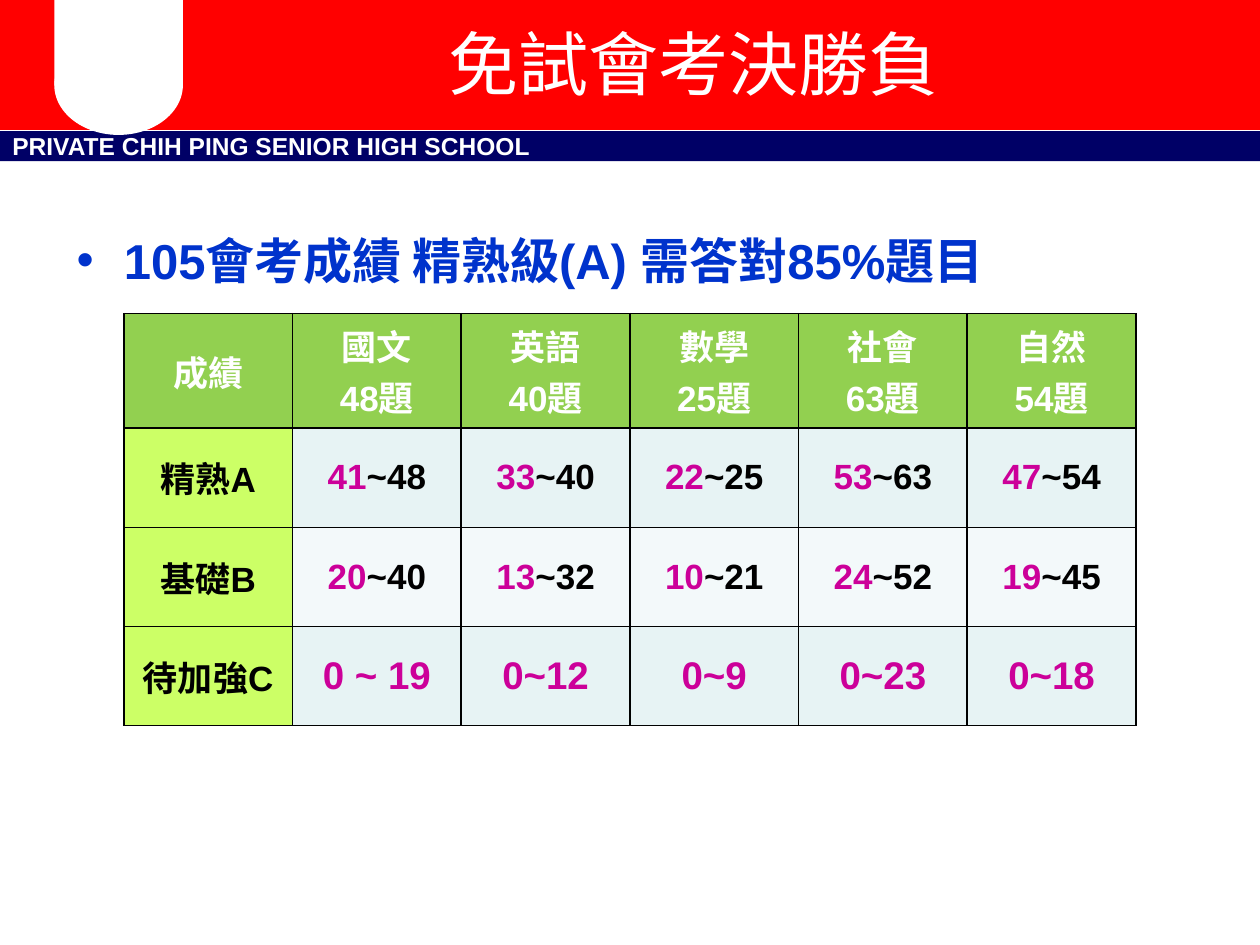
from lxml.etree import SubElement
from pptx import Presentation
from pptx.dml.color import RGBColor
from pptx.enum.shapes import MSO_SHAPE
from pptx.enum.text import MSO_ANCHOR, PP_ALIGN
from pptx.oxml.ns import qn
from pptx.util import Pt

WHITE = RGBColor(0xFF, 0xFF, 0xFF)
BLACK = RGBColor(0x00, 0x00, 0x00)
RED = RGBColor(0xFF, 0x00, 0x00)
NAVY = RGBColor(0x00, 0x00, 0x66)
BLUE = RGBColor(0x00, 0x33, 0xCC)
MAGENTA = RGBColor(0xCC, 0x00, 0x99)
GREEN = RGBColor(0x92, 0xD0, 0x50)
LIME = RGBColor(0xCC, 0xFF, 0x66)
PALE = RGBColor(0xE7, 0xF3, 0xF4)
PALER = RGBColor(0xF3, 0xF9, 0xFA)

HEADER_HEIGHT = 65.4
LEVEL_HEIGHT = 56.7
SUBJECTS = ["成績", "國文\n48題", "英語\n40題", "數學\n25題", "社會\n63題", "自然\n54題"]
LEVELS = [
    ("精熟A", ["41~48", "33~40", "22~25", "53~63", "47~54"], PALE),
    ("基礎B", ["20~40", "13~32", "10~21", "24~52", "19~45"], PALER),
    ("待加強C", ["0 ~ 19", "0~12", "0~9", "0~23", "0~18"], PALE),
]


def format_run(r, size, color, bold=True):
    """Set the font of one run."""
    r.font.name = "Arial"
    r.font.size = Pt(size)
    r.font.bold = bold
    r.font.color.rgb = color


def add_block(s, kind, x, y, w, h, color, line_width=0):
    """Add a plain filled shape."""
    sp = s.shapes.add_shape(kind, Pt(x), Pt(y), Pt(w), Pt(h))
    sp.shadow.inherit = False
    sp.fill.solid()
    sp.fill.fore_color.rgb = color
    if line_width:
        sp.line.color.rgb = color
        sp.line.width = Pt(line_width)
    else:
        sp.line.fill.background()
    return sp


def write_line(tf, text, size, color, bold, align, anchor):
    """Write one formatted paragraph and return it."""
    tf.word_wrap = True
    tf.vertical_anchor = anchor
    tf.text = text
    p = tf.paragraphs[0]
    p.alignment = align
    format_run(p.runs[0], size, color, bold)
    return p


def add_text(s, x, y, w, h, *style):
    """Add a one-paragraph text box and return the paragraph."""
    sp = s.shapes.add_textbox(Pt(x), Pt(y), Pt(w), Pt(h))
    return write_line(sp.text_frame, *style)


def set_bullet(p, indent):
    """Give a paragraph a hanging round bullet."""
    pPr = p._p.get_or_add_pPr()
    pPr.set("marL", str(Pt(indent)))
    pPr.set("indent", str(-Pt(indent)))
    SubElement(pPr, qn("a:buFont"), typeface="Arial")
    SubElement(pPr, qn("a:buChar"), char="•")


def set_borders(cell):
    """Draw a thin black line on each side of a cell."""
    tcPr = cell._tc.get_or_add_tcPr()
    for i, side in enumerate(("lnL", "lnR", "lnT", "lnB")):
        ln = tcPr.makeelement(qn(f"a:{side}"), {"w": str(Pt(1))})
        fill = SubElement(ln, qn("a:solidFill"))
        SubElement(fill, qn("a:srgbClr"), val=str(BLACK))
        tcPr.insert(i, ln)


def fill_cell(cell, lines, fill, size=20):
    """Write lines of (text, colour) runs into a bordered cell."""
    cell.fill.solid()
    cell.fill.fore_color.rgb = fill
    cell.vertical_anchor = MSO_ANCHOR.MIDDLE
    set_borders(cell)
    tf = cell.text_frame
    for i, parts in enumerate(lines):
        p = tf.paragraphs[0] if i == 0 else tf.add_paragraph()
        p.alignment = PP_ALIGN.CENTER
        for text, color in parts:
            r = p.add_run()
            r.text = text
            format_run(r, size, color)


def add_score_table(s, x, y, w):
    """Add the table of correct answers needed for each level."""
    heights = [HEADER_HEIGHT] + [LEVEL_HEIGHT] * len(LEVELS)
    table = s.shapes.add_table(len(heights), len(SUBJECTS),
                               Pt(x), Pt(y), Pt(w), Pt(sum(heights))).table
    for row, height in zip(table.rows, heights):
        row.height = Pt(height)
    for col, subject in enumerate(SUBJECTS):
        lines = [[(text, WHITE)] for text in subject.split("\n")]
        fill_cell(table.cell(0, col), lines, GREEN)
    for row, (level, scores, fill) in enumerate(LEVELS, 1):
        fill_cell(table.cell(row, 0), [[(level, BLACK)]], LIME)
        for col, score in enumerate(scores, 1):
            if row == len(LEVELS):
                fill_cell(table.cell(row, col), [[(score, MAGENTA)]], fill, 22)
            else:
                low, high = score.split("~")
                parts = [(low, MAGENTA), (f"~{high}", BLACK)]
                fill_cell(table.cell(row, col), [parts], fill)


def add_header(s):
    """Add the school band, the red banner, the badge and the title."""
    band = add_block(s, MSO_SHAPE.RECTANGLE, 0, 74.9, 720, 17.3, NAVY)
    band.text_frame.margin_top = band.text_frame.margin_bottom = 0
    write_line(band.text_frame, "PRIVATE CHIH PING SENIOR HIGH SCHOOL", 14,
               WHITE, True, PP_ALIGN.LEFT, MSO_ANCHOR.MIDDLE)
    add_block(s, MSO_SHAPE.RECTANGLE, 0, 0, 720, 71.3, RED, 6)
    add_block(s, MSO_SHAPE.RECTANGLE, 31, 0, 73.5, 49, WHITE)
    add_block(s, MSO_SHAPE.OVAL, 31, 20.2, 73.5, 56.9, WHITE)
    add_text(s, 110.2, 0, 572.4, 71.3, "免試會考決勝負", 40, WHITE, False,
             PP_ALIGN.CENTER, MSO_ANCHOR.MIDDLE)


def main():
    """Build and save the slide."""
    prs = Presentation()
    prs.slide_width, prs.slide_height = Pt(720), Pt(540)
    s = prs.slides.add_slide(prs.slide_layouts[6])
    add_header(s)
    p = add_text(s, 36.7, 128.2, 648, 356.4, "105會考成績 精熟級(A) 需答對85%題目",
                 28, BLUE, True, PP_ALIGN.LEFT, MSO_ANCHOR.TOP)
    set_bullet(p, 27)
    add_score_table(s, 70.8, 179.2, 578.4)
    prs.save("out.pptx")


if __name__ == "__main__":
    main()
